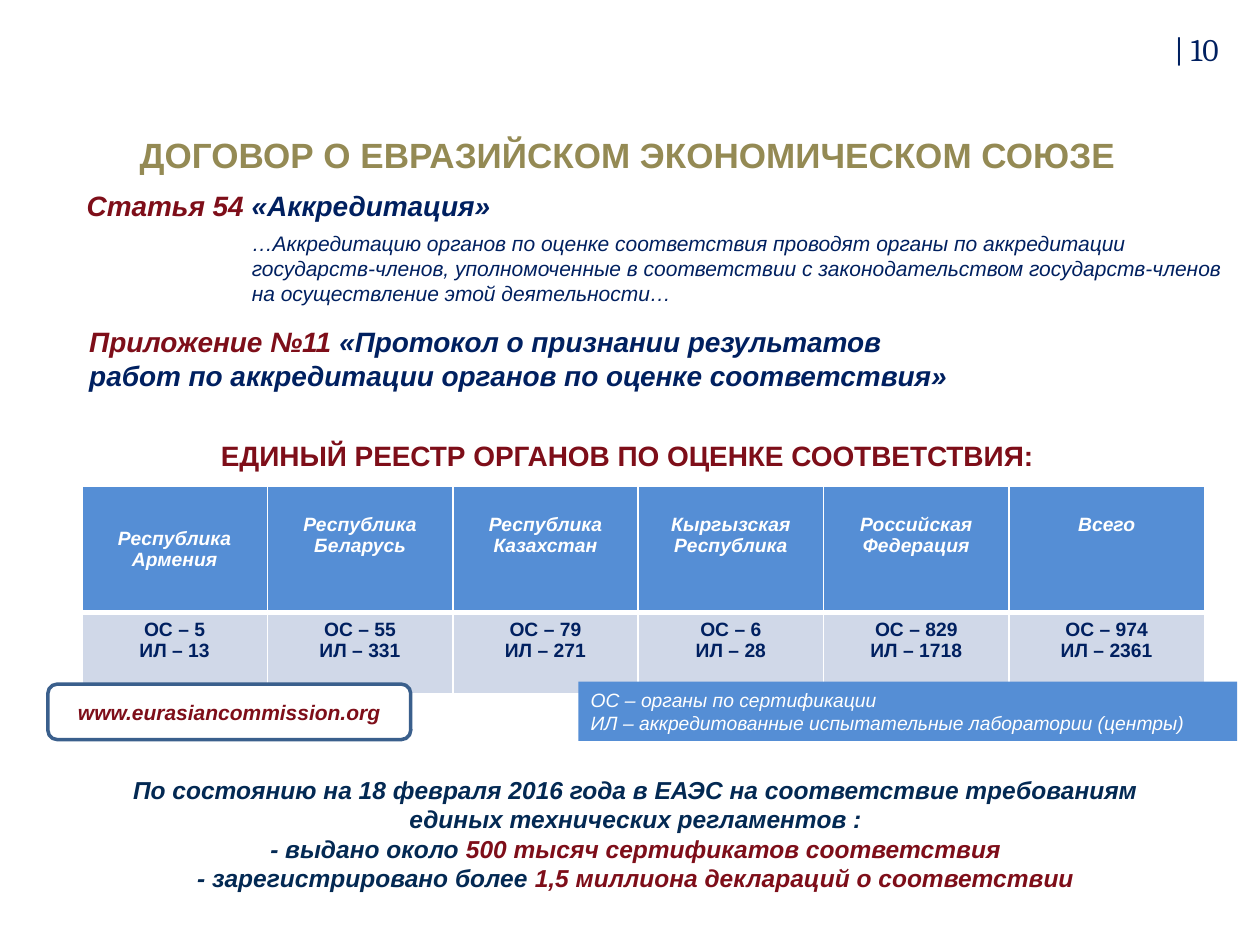
from lxml import etree
from pptx import Presentation
from pptx.dml.color import RGBColor
from pptx.enum.shapes import MSO_SHAPE
from pptx.enum.text import MSO_ANCHOR, PP_ALIGN
from pptx.oxml.ns import qn
from pptx.util import Inches, Pt

RECT, ROUND = MSO_SHAPE.RECTANGLE, MSO_SHAPE.ROUNDED_RECTANGLE
TOP, MIDDLE = MSO_ANCHOR.TOP, MSO_ANCHOR.MIDDLE
LEFT, CENTER = PP_ALIGN.LEFT, PP_ALIGN.CENTER
NAVY, RED, GOLD, BLUE = "002060", "7E0E19", "948A54", "558ED5"
WHITE, PALE, EDGE, DARK = "FFFFFF", "D0D8E8", "3A5F8C", "032953"

HEADS = ["Республика Армения", "Республика Беларусь", "Республика Казахстан",
         "Кыргызская Республика", "Российская Федерация", "Всего"]
COUNTS = [(5, 13), (55, 331), (79, 271), (6, 28), (829, 1718), (974, 2361)]


def color(code):
    return RGBColor.from_string(code)


def write(frame, lines, size, align=LEFT, bold=False, italic=False, name="Arial"):
    for i, parts in enumerate(lines):
        para = frame.paragraphs[0] if i == 0 else frame.add_paragraph()
        para.alignment = align
        for text, tint in parts:
            for j, piece in enumerate(text.split("\n")):
                if j:
                    para.add_line_break()
                run = para.add_run()
                run.text = piece
                font = run.font
                font.name, font.size = name, Pt(size)
                font.bold, font.italic = bold, italic
                font.color.rgb = color(tint)


def label(slide, box, lines, size, anchor=TOP, wrap=True, **style):
    shape = slide.shapes.add_textbox(*map(Inches, box))
    frame = shape.text_frame
    frame.word_wrap = wrap
    frame.vertical_anchor = anchor
    write(frame, lines, size, **style)


def panel(slide, box, kind, fill, edge, lines, size, anchor=TOP, **style):
    shape = slide.shapes.add_shape(kind, *map(Inches, box))
    shape.shadow.inherit = False
    shape.fill.solid()
    shape.fill.fore_color.rgb = color(fill)
    if edge:
        shape.line.color.rgb = color(edge)
        shape.line.width = Pt(2)
    else:
        shape.line.fill.background()
    shape.text_frame.word_wrap = True
    shape.text_frame.vertical_anchor = anchor
    write(shape.text_frame, lines, size, **style)


def border(cell, widths):
    props = cell._tc.get_or_add_tcPr()
    for i, (side, width) in enumerate(zip("LRTB", widths)):
        line = etree.Element(qn("a:ln" + side), w=str(Pt(width)))
        fill = etree.SubElement(line, qn("a:solidFill"))
        etree.SubElement(fill, qn("a:srgbClr"), val=WHITE)
        props.insert(i, line)


def paint(cell, fill, widths):
    cell.fill.solid()
    cell.fill.fore_color.rgb = color(fill)
    border(cell, widths)


def table(slide, box):
    grid = slide.shapes.add_table(2, len(HEADS), *map(Inches, box)).table
    last = 1.55
    step = (box[2] - last) / (len(HEADS) - 1)
    for col in grid.columns:
        col.width = Inches(step)
    grid.columns[len(HEADS) - 1].width = Inches(last)
    grid.rows[0].height = Inches(1)
    grid.rows[1].height = Inches(box[3] - 1)
    for i, (head, (certs, labs)) in enumerate(zip(HEADS, COUNTS)):
        top, low = grid.cell(0, i), grid.cell(1, i)
        paint(top, BLUE, (1, 1, 1, 3))
        paint(low, PALE, (1, 1, 3, 1))
        if i == 0:
            top.vertical_anchor = MIDDLE
        else:
            top.margin_top = Inches(0.22)
        write(top.text_frame, [[(head, WHITE)]], 11, CENTER, True, True)
        rows = [[(f"ОС – {certs}", NAVY)], [(f"ИЛ – {labs}", NAVY)]]
        write(low.text_frame, rows, 11, CENTER, True)


def treaty(slide, box):
    x, y, w, h = box
    label(slide, (x, y, w, 0.46),
          [[("ДОГОВОР О ЕВРАЗИЙСКОМ ЭКОНОМИЧЕСКОМ СОЮЗЕ", GOLD)]], 20,
          MIDDLE, align=CENTER, bold=True)
    label(slide, (x + 0.61, y + 0.45, w - 0.7, 0.37),
          [[("Статья 54 ", RED), ("«Аккредитация»", NAVY)]], 16,
          bold=True, italic=True)
    label(slide, (x + 1.92, y + 0.78, w - 2.07, 0.71),
          [[("…Аккредитацию органов по оценке соответствия проводят органы "
             "по аккредитации государств-членов, уполномоченные в соответствии "
             "с законодательством государств-членов на осуществление этой "
             "деятельности…", NAVY)]], 12, italic=True)
    label(slide, (x + 0.63, y + 1.53, w - 0.62, h - 1.53),
          [[("Приложение №11 ", RED),
            ("«Протокол о признании результатов\n"
             "работ по аккредитации органов по оценке соответствия»", NAVY)]],
          16, bold=True, italic=True)


def census(slide, box):
    x, y, w, h = box
    label(slide, (x, y, w, 0.71),
          [[("ЕДИНЫЙ РЕЕСТР ОРГАНОВ ПО ОЦЕНКЕ СООТВЕТСТВИЯ:", RED)]], 16,
          MIDDLE, False, align=CENTER, bold=True)
    table(slide, (x + 0.47, y + 0.6, 8.91, 1.65))
    panel(slide, (x + 4.41, y + 2.15, 5.23, 0.47), RECT, BLUE, None,
          [[("ОС – органы по сертификации", WHITE)],
           [("ИЛ – аккредитованные испытательные лаборатории (центры)", WHITE)]],
          11, italic=True)
    panel(slide, (x + 0.2, y + 2.17, 2.88, 0.44), ROUND, WHITE, EDGE,
          [[("www.eurasiancommission.org", RED)]], 12, MIDDLE,
          align=CENTER, bold=True, italic=True)


def status(slide, box):
    label(slide, box,
          [[("По состоянию на 18 февраля 2016 года в ЕАЭС на соответствие "
             "требованиям единых технических регламентов :", DARK)],
           [("- выдано около ", DARK), ("500 тысяч сертификатов соответствия", RED)],
           [("- зарегистрировано более ", DARK),
            ("1,5 миллиона деклараций о соответствии", RED)]],
          14, align=CENTER, bold=True, italic=True)


def main():
    deck = Presentation()
    deck.slide_width, deck.slide_height = Inches(10), Inches(7.5)
    slide = deck.slides.add_slide(deck.slide_layouts[6])
    label(slide, (9.22, 0.19, 0.67, 0.42), [[("| 10", NAVY)]], 18, name="Cambria")
    treaty(slide, (-0.02, 1, 10, 2.17))
    census(slide, (0.18, 3.26, 9.6, 2.62))
    status(slide, (0.59, 6.1, 8.91, 1.04))
    deck.save("out.pptx")


if __name__ == "__main__":
    main()
